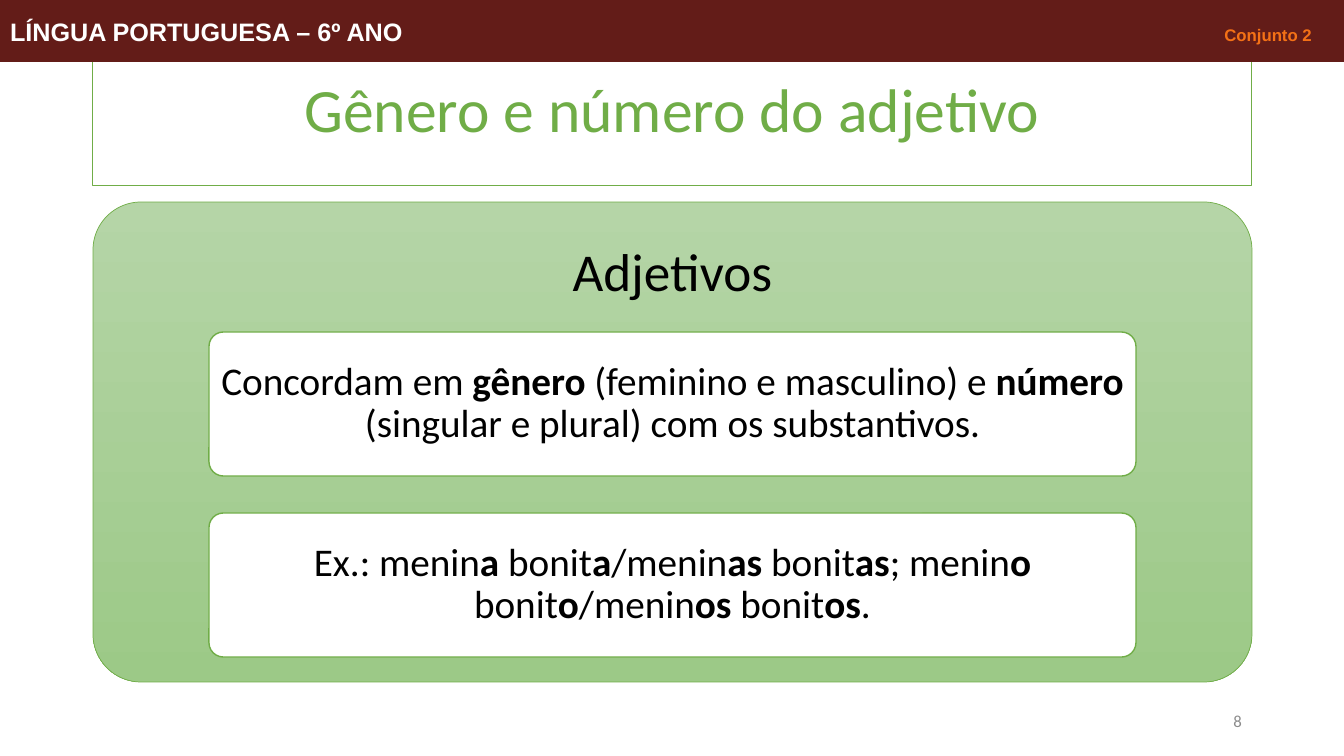
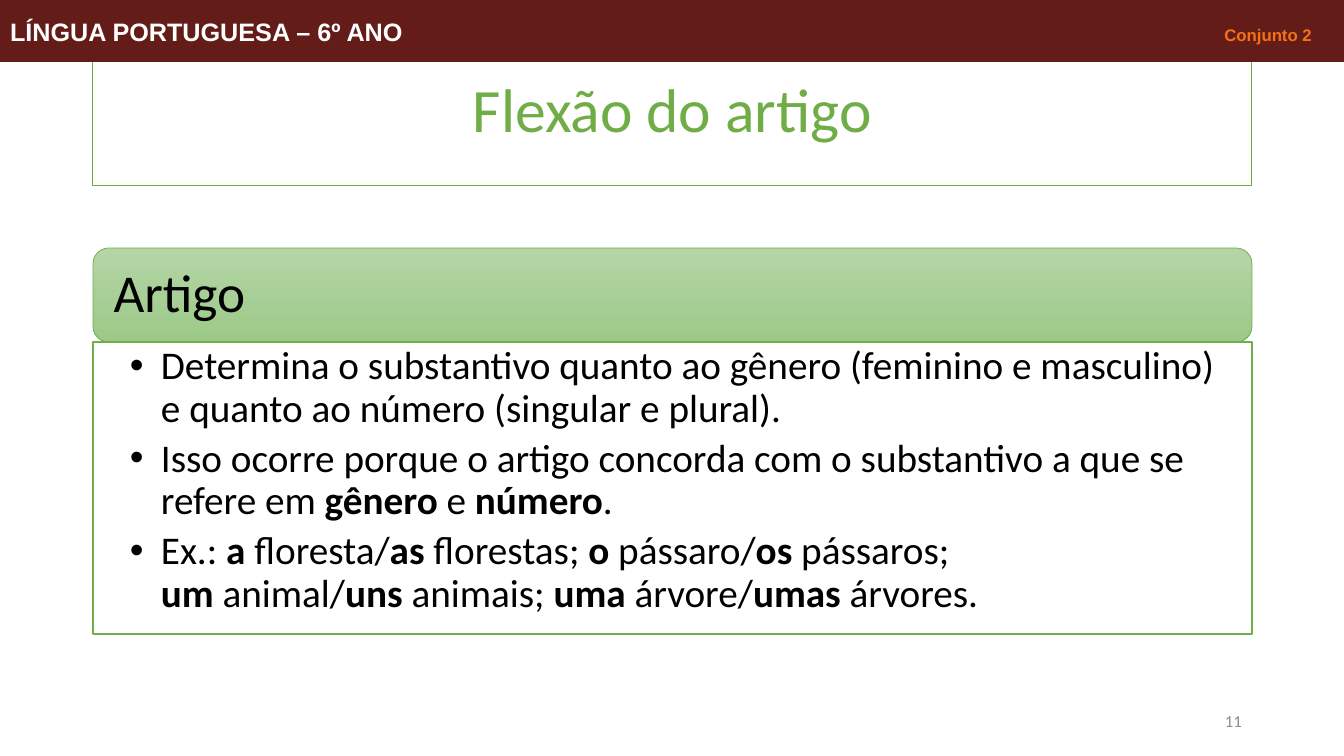
from dataclasses import dataclass

from lxml.etree import SubElement
from pptx import Presentation
from pptx.dml.color import RGBColor
from pptx.enum.shapes import MSO_SHAPE
from pptx.enum.text import MSO_ANCHOR, PP_ALIGN
from pptx.oxml.ns import qn
from pptx.util import Emu, Pt


@dataclass(frozen=True)
class Theme:
    green: str = "70AD47"
    gradient: tuple = ("B5D5A7", "9CC987")
    maroon: str = "631C18"
    orange: str = "F47116"
    white: str = "FFFFFF"
    black: str = "000000"
    grey: str = "8C8C8C"
    body_font: str = "Calibri"
    band_font: str = "Arial"
    title_size: float = 44
    heading_size: float = 38
    body_size: float = 28
    band_size: float = 18
    small_size: float = 12


theme = Theme()
SCALE = 914400 / 100.8
LEFT, WIDTH = 93, 1159


def px(length):
    return Emu(round(length * SCALE))


def add_box(slide, area, paragraphs=(), outline=MSO_SHAPE.RECTANGLE, fill=None,
            line=None, weight=1, corner=None, size=theme.body_size,
            color=theme.black, align=PP_ALIGN.CENTER, anchor=MSO_ANCHOR.MIDDLE,
            insets=(10, 5, 10, 5), spacing=0.9, after=0):
    box = slide.shapes.add_shape(outline, *map(px, area))
    box.shadow.inherit = False
    if corner is not None:
        box.adjustments[0] = corner
    if fill is None:
        box.fill.background()
    elif isinstance(fill, tuple):
        box.fill.gradient()
        box.fill.gradient_angle = 270
        for stop, shade in zip(box.fill.gradient_stops, fill):
            stop.color.rgb = RGBColor.from_string(shade)
    else:
        box.fill.solid()
        box.fill.fore_color.rgb = RGBColor.from_string(fill)
    if line:
        box.line.color.rgb = RGBColor.from_string(line)
        box.line.width = Pt(weight)
    else:
        box.line.fill.background()

    frame = box.text_frame
    sides = ("margin_left", "margin_top", "margin_right", "margin_bottom")
    frame_format = dict(zip(sides, map(px, insets)))
    frame_format.update(word_wrap=True, vertical_anchor=anchor)
    for name, value in frame_format.items():
        setattr(frame, name, value)

    paragraph_format = {"alignment": align, "line_spacing": spacing, "space_after": Pt(after)}
    font_format = {"name": theme.body_font, "size": Pt(size)}
    for index, text in enumerate(paragraphs):
        paragraph = frame.add_paragraph() if index else frame.paragraphs[0]
        for name, value in paragraph_format.items():
            setattr(paragraph, name, value)
        for part, chunk in enumerate(text.split("*")):
            for row, words in enumerate(chunk.split("\n")):
                if row:
                    paragraph.add_line_break()
                if words:
                    run = paragraph.add_run()
                    run.text = words
                    for name, value in font_format.items():
                        setattr(run.font, name, value)
                    run.font.bold = part % 2 == 1
                    run.font.color.rgb = RGBColor.from_string(color)
    return box


deck = Presentation()
deck.slide_width, deck.slide_height = px(1344), px(756)

lessons = [
    {
        "title": "Gênero e número do adjetivo",
        "number": "8",
        "heading": "Adjetivos",
        "cards": [
            "Concordam em *gênero* (feminino e masculino) e *número* "
            "(singular e plural) com os substantivos.",
            "Ex.: menin*a* bonit*a*/menin*as* bonit*as*; "
            "menin*o* bonit*o*/menin*os* bonit*os*.",
        ],
    },
    {
        "title": "Flexão do artigo",
        "number": "11",
        "heading": "Artigo",
        "bullets": [
            "Determina o substantivo quanto ao gênero (feminino e masculino) "
            "e quanto ao número (singular e plural).",
            "Isso ocorre porque o artigo concorda com o substantivo a que se "
            "refere em *gênero* e *número*.",
            "Ex.: *a* floresta/*as* florestas; *o* pássaro/*os* pássaros; \n"
            "*um* animal/*uns* animais; *uma* árvore/*umas* árvores.",
        ],
    },
]

for lesson in lessons:
    slide = deck.slides.add_slide(deck.slide_layouts[6])
    add_box(slide, (LEFT, 40, WIDTH, 146), [lesson["title"]], line=theme.green,
            weight=0.75, size=theme.title_size, color=theme.green)

    if "cards" in lesson:
        add_box(slide, (LEFT, 202, WIDTH, 480), outline=MSO_SHAPE.ROUNDED_RECTANGLE,
                fill=theme.gradient, line=theme.green, weight=0.5, corner=0.1)
        add_box(slide, (LEFT, 202, WIDTH, 144), [lesson["heading"]],
                size=theme.heading_size, insets=(16, 16, 16, 16))
        for order, card in enumerate(lesson["cards"]):
            add_box(slide, (209, 332 + 181 * order, 927, 144), [card],
                    outline=MSO_SHAPE.ROUNDED_RECTANGLE, fill=theme.white,
                    line=theme.green, corner=0.1, insets=(6, 6, 6, 6))
    else:
        add_box(slide, (LEFT, 248, WIDTH, 94), [lesson["heading"]],
                outline=MSO_SHAPE.ROUNDED_RECTANGLE, fill=theme.gradient,
                line=theme.green, weight=0.5, size=theme.heading_size,
                align=PP_ALIGN.LEFT, insets=(16, 16, 16, 16))
        explanation = add_box(slide, (LEFT, 342, WIDTH, 292), lesson["bullets"],
                              fill=theme.white, line=theme.green,
                              align=PP_ALIGN.LEFT, anchor=MSO_ANCHOR.TOP,
                              insets=(37, 4, 22, 4), after=5.6)
        for paragraph in explanation.text_frame.paragraphs:
            properties = paragraph._p.get_or_add_pPr()
            properties.set("marL", str(px(31)))
            properties.set("indent", str(px(-31)))
            SubElement(properties, qn("a:buFont"), typeface=theme.band_font)
            SubElement(properties, qn("a:buChar"), char="•")

    add_box(slide, (950, 701, 302, 40), [lesson["number"]], size=theme.small_size,
            color=theme.grey, align=PP_ALIGN.RIGHT, spacing=1.0)

    band = add_box(slide, (0, 0, 1344, 62), fill=theme.maroon, line=theme.maroon, weight=0.75)
    course = band.text_frame.paragraphs[0]
    course.alignment = PP_ALIGN.LEFT
    tabs = SubElement(course._p.get_or_add_pPr(), qn("a:tabLst"))
    SubElement(tabs, qn("a:tab"), pos=str(px(1302)), algn="r")
    for label, size, color in (
        ("LÍNGUA PORTUGUESA – 6º ANO\t", theme.band_size, theme.white),
        ("Conjunto 2", theme.small_size, theme.orange),
    ):
        run = course.add_run()
        run.text = label
        for name, value in {"name": theme.band_font, "size": Pt(size), "bold": True}.items():
            setattr(run.font, name, value)
        run.font.color.rgb = RGBColor.from_string(color)

deck.save("out.pptx")
